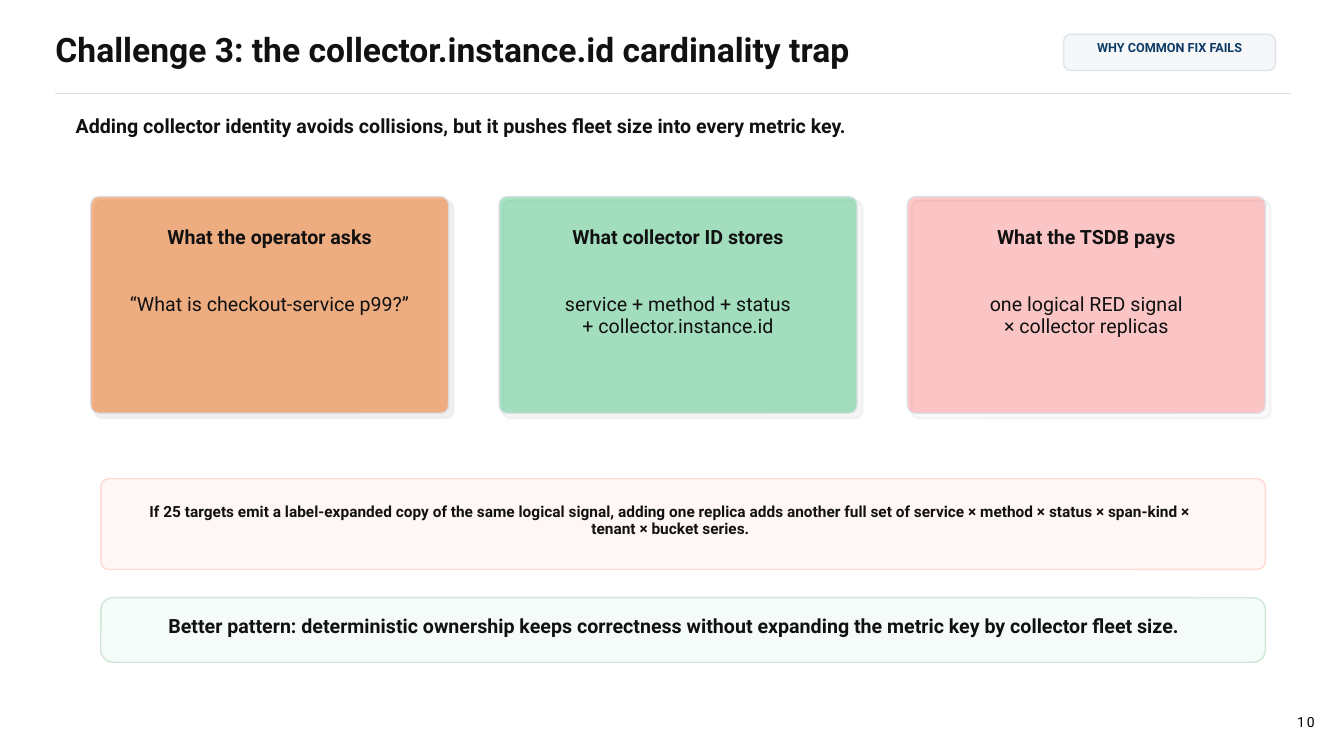
from lxml.etree import SubElement
from pptx import Presentation
from pptx.dml.color import RGBColor
from pptx.enum.shapes import MSO_CONNECTOR, MSO_SHAPE
from pptx.enum.text import MSO_ANCHOR, MSO_AUTO_SIZE, PP_ALIGN
from pptx.oxml.ns import qn
from pptx.util import Inches, Pt

INK = RGBColor(0x11, 0x11, 0x11)
BLACK = RGBColor(0, 0, 0)
NAVY = RGBColor(0x0D, 0x3B, 0x66)
GREY = RGBColor(0xD9, 0xDE, 0xE7)
PALE = RGBColor(0xF6, 0xF7, 0xF9)
ORANGE = RGBColor(0xED, 0x7D, 0x31)
GREEN = RGBColor(0x00, 0xB0, 0x50)
RED = RGBColor(0xFF, 0x00, 0x00)
BLUSH = RGBColor(0xFF, 0xF7, 0xF5)
ROSE = RGBColor(0xFF, 0xD6, 0xCC)
MINT = RGBColor(0xF5, 0xFB, 0xF8)
SAGE = RGBColor(0xC8, 0xE6, 0xD0)

FRAME = {
    "margin_left": 0, "margin_top": 0, "margin_right": 0, "margin_bottom": 0,
    "word_wrap": True, "auto_size": MSO_AUTO_SIZE.NONE,
    "vertical_anchor": MSO_ANCHOR.TOP,
}
FONT = {"name": "Roboto", "size": Pt(14), "bold": True}

CARDS = [
    (ORANGE, 58, "What the operator asks", "“What is checkout-service p99?”"),
    (GREEN, 34, "What collector ID stores",
     "service + method + status\n+ collector.instance.id"),
    (RED, 21, "What the TSDB pays",
     "one logical RED signal\n× collector replicas"),
]


def apply(target, values):
    for name, value in values.items():
        setattr(target, name, value)


def write(shape, text, align=PP_ALIGN.LEFT, color=INK, space=0.92, **font):
    """Fill a shape's frame with text, one paragraph per line."""
    frame = shape.text_frame
    apply(frame, FRAME)
    frame.text = text
    for para in frame.paragraphs:
        apply(para, {"alignment": align, "line_spacing": space})
        for run in para.runs:
            apply(run.font, {**FONT, **font})
            run.font.color.rgb = color


def add_text(slide, box, text, **style):
    shape = slide.shapes.add_textbox(*map(Inches, box))
    write(shape, text, **style)
    return shape


def set_alpha(fill, percent):
    color = fill.find(qn("a:solidFill"))[0]
    SubElement(color, qn("a:alpha"), val=str(percent * 1000))


def add_panel(slide, box, radius, fill, edge, clear=85, alpha=None):
    """Draw a rounded panel; clear and alpha are opacities in percent."""
    panel = slide.shapes.add_shape(MSO_SHAPE.ROUNDED_RECTANGLE,
                                   *map(Inches, box))
    panel.adjustments[0] = radius / min(box[2:])
    panel.shadow.inherit = False
    panel.fill.solid()
    panel.fill.fore_color.rgb = fill
    panel.line.color.rgb = edge
    panel.line.width = Pt(1)
    props = panel.element.spPr
    set_alpha(props.find(qn("a:ln")), clear)
    if alpha:
        set_alpha(props, alpha)
    return panel


def add_shadow(panel):
    effects = panel.element.spPr.find(qn("a:effectLst"))
    shadow = SubElement(effects, qn("a:outerShdw"), blurRad=str(Pt(1)),
                        dist=str(Pt(4)), dir=str(45 * 60000),
                        algn="tl", rotWithShape="0")
    color = SubElement(shadow, qn("a:srgbClr"), val=str(BLACK))
    SubElement(color, qn("a:alpha"), val="10000")


def add_card(slide, left, fill, alpha, head, body):
    panel = add_panel(slide, (left, 1.95, 3.55, 2.15), 0.08, fill, GREY,
                      alpha=alpha)
    add_shadow(panel)
    add_text(slide, (left + 0.25, 2.25, 3.05, 0.28), head,
             align=PP_ALIGN.CENTER)
    add_text(slide, (left + 0.25, 2.92, 3.05, 0.55), body,
             align=PP_ALIGN.CENTER, bold=False)


def add_rule(slide, left, right, top):
    rule = slide.shapes.add_connector(
        MSO_CONNECTOR.STRAIGHT, *map(Inches, (left, top, right, top)))
    rule.line.color.rgb = GREY
    rule.line.width = Pt(1)
    SubElement(rule.element.spPr, qn("a:effectLst"))


def add_title(slide, box, text):
    title = slide.shapes.title
    apply(title, dict(zip(("left", "top", "width", "height"),
                          map(Inches, box))))
    write(title, text, size=Pt(24))


def add_number(slide, text):
    number = add_text(slide, (12.72, 6.93, 0.32, 0.32), text,
                      align=PP_ALIGN.RIGHT, color=BLACK, space=1.0,
                      size=Pt(10), bold=False)
    number.text_frame.vertical_anchor = MSO_ANCHOR.BOTTOM
    run = number.text_frame.paragraphs[0].runs[0]
    run.font._element.set("spc", "150")


def main():
    deck = Presentation()
    deck.slide_width, deck.slide_height = Inches(13.33), Inches(7.5)
    slide = deck.slides.add_slide(deck.slide_layouts[5])

    add_title(slide, (0.55, 0.33, 9.7, 0.45),
              "Challenge 3: the collector.instance.id cardinality trap")
    add_panel(slide, (10.55, 0.34, 2.1, 0.36), 0.07, PALE, GREY, clear=80)
    add_text(slide, (10.65, 0.41, 1.9, 0.22), "WHY COMMON FIX FAILS",
             align=PP_ALIGN.CENTER, color=NAVY, size=Pt(9))
    add_rule(slide, 0.55, 12.8, 0.93)
    add_text(slide, (0.75, 1.15, 11.8, 0.3),
             "Adding collector identity avoids collisions, but it pushes "
             "fleet size into every metric key.")

    for index, card in enumerate(CARDS):
        add_card(slide, 0.9 + 4.05 * index, *card)

    add_panel(slide, (1, 4.75, 11.55, 0.9), 0.08, BLUSH, ROSE)
    add_text(slide, (1.25, 5, 10.8, 0.32),
             "If 25 targets emit a label-expanded copy of the same logical "
             "signal, adding one replica adds another full set of service × "
             "method × status × span-kind × tenant × bucket series.",
             align=PP_ALIGN.CENTER, size=Pt(11))
    add_panel(slide, (1, 5.93, 11.55, 0.64), 0.12, MINT, SAGE)
    add_text(slide, (1.67, 6.11, 10.04, 0.24),
             "Better pattern: deterministic ownership keeps correctness "
             "without expanding the metric key by collector fleet size.")
    add_number(slide, "10")
    deck.save("out.pptx")


if __name__ == "__main__":
    main()
